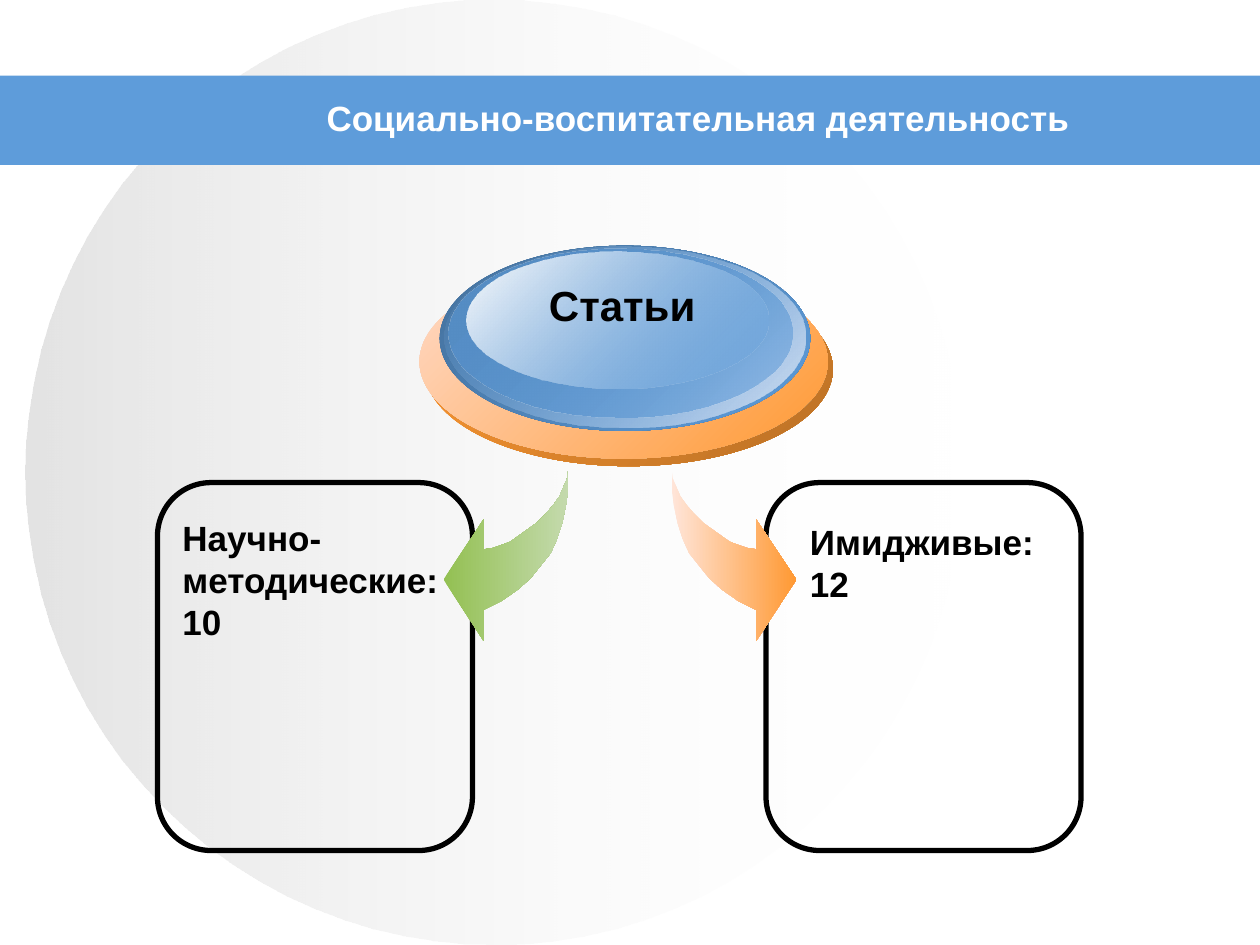
from pptx import Presentation
from pptx.dml.color import RGBColor as Rgb
from pptx.enum.shapes import MSO_SHAPE as Kind
from pptx.enum.text import MSO_ANCHOR as Anchor, MSO_AUTO_SIZE as Fit, PP_ALIGN as Align
from pptx.oxml.ns import qn
from pptx.util import Pt
from lxml.etree import SubElement

PX = 9144  # 100 px to the inch
FONT = "Arial"
HEX = {
    "white": "FFFFFF", "black": "000000", "gray": "C0C0C0",
    "blue": "5E9CDA", "navy": "43709C", "steel": "558DC5", "ice": "D8E3F3",
    "orange": "FF9933", "rust": "BA7025", "peach": "FFDAC7", "blush": "FFE5D9",
    "green": "93C052", "mint": "C4DAAD",
}

# Left, top, width, height, first and last (colour, opacity), back to front
DISC = [
    (337, 216, 324, 154, ("orange", 100), ("rust", 100)),
    (333, 210, 324, 154, ("peach", 100), ("orange", 100)),
    (349, 195, 294, 147, ("navy", 100), ("blue", 100)),
    (353, 196, 286, 143, ("blue", 0), ("ice", 100)),
    (356, 197, 273, 134, ("steel", 100), ("blue", 48)),
    (370, 200, 240, 108, ("white", 100), ("blue", 38)),
]
# Outline of the arrow that points left
ARROW = [
    (451, 373), (451, 388), (449, 402), (446, 416), (442, 428), (437, 439),
    (429, 449), (421, 459), (411, 468), (398, 477), (384, 484), (384, 509),
    (352, 460), (384, 412), (384, 436), (391, 435), (397, 433), (405, 430),
    (412, 425), (419, 420), (426, 415), (433, 408), (439, 401), (444, 394),
    (447, 387), (450, 380),
]
MIRROR = 984  # sum of x of matching points in the two arrows


def color(name):
    return Rgb.from_string(HEX[name])


def blend(shape, first, last, angle=0):
    """Fill with a two-stop gradient, its angle clockwise, and no line."""
    shape.shadow.inherit = False
    shape.line.fill.background()
    shape.fill.gradient()
    shape.fill.gradient_angle = -angle % 360
    for stop, (name, _) in zip(shape.fill.gradient_stops, (first, last)):
        stop.color.rgb = color(name)
    tags = shape.fill._xPr.iter(qn("a:srgbClr"))
    for tag, (_, alpha) in zip(list(tags), (first, last)):
        if alpha < 100:
            SubElement(tag, qn("a:alpha")).set("val", str(alpha * 1000))


def add_form(slide, kind, *box):
    shape = slide.shapes.add_shape(kind, *(v * PX for v in box))
    shape.shadow.inherit = False
    return shape


def add_oval(slide, *box, first, last, angle=0):
    blend(add_form(slide, Kind.OVAL, *box), first, last, angle)


def add_band(slide, *box):
    band = add_form(slide, Kind.RECTANGLE, *box)
    band.fill.solid()
    band.fill.fore_color.rgb = color("blue")
    band.line.fill.background()


def add_frame(slide, *box):
    frame = add_form(slide, Kind.ROUNDED_RECTANGLE, *box)
    frame.adjustments[0] = 0.17
    frame.fill.background()
    frame.line.color.rgb = color("black")
    frame.line.width = Pt(3)


def add_arrow(slide, points, first, last):
    pen = slide.shapes.build_freeform(*points[0], scale=PX)
    pen.add_line_segments(points[1:], close=True)
    blend(pen.convert_to_shape(), first, last)


def add_text(slide, text, *box, size=20, ink="black", align=Align.LEFT,
             anchor=Anchor.TOP, wrap=True, fit=Fit.SHAPE_TO_FIT_TEXT):
    area = slide.shapes.add_textbox(*(v * PX for v in box)).text_frame
    area.text = text
    area.word_wrap = wrap
    area.auto_size = fit
    area.vertical_anchor = anchor
    line = area.paragraphs[0]
    line.alignment = align
    font = line.runs[0].font
    font.name, font.size, font.bold = FONT, Pt(size), True
    font.color.rgb = color(ink)


def main():
    deck = Presentation()
    deck.slide_width, deck.slide_height = 1000 * PX, 750 * PX
    slide = deck.slides.add_slide(deck.slide_layouts[6])

    add_oval(slide, 20, 0, 744, 750, first=("gray", 44), last=("white", 0))
    add_band(slide, 0, 60, 1000, 71)
    add_text(slide, "Социально-воспитательная деятельность", 225, 67, 658, 53,
             ink="white", align=Align.CENTER, anchor=Anchor.MIDDLE, fit=Fit.NONE)

    for left in (608, 125):
        add_frame(slide, left, 383, 250, 292)
    add_text(slide, "Научно-методические: 10", 135, 405, 240, 111)

    add_arrow(slide, ARROW, ("green", 100), ("mint", 100))
    flipped = [(MIRROR - x, y) for x, y in ARROW]
    add_arrow(slide, flipped, ("blush", 100), ("orange", 100))

    for *box, first, last in DISC:
        add_oval(slide, *box, first=first, last=last, angle=45)
    add_text(slide, "Статьи ", 425, 217, 147, 50, size=24,
             align=Align.CENTER, wrap=False)
    add_text(slide, "Имидживые: 12", 633, 408, 223, 77)

    deck.save("out.pptx")


if __name__ == "__main__":
    main()
